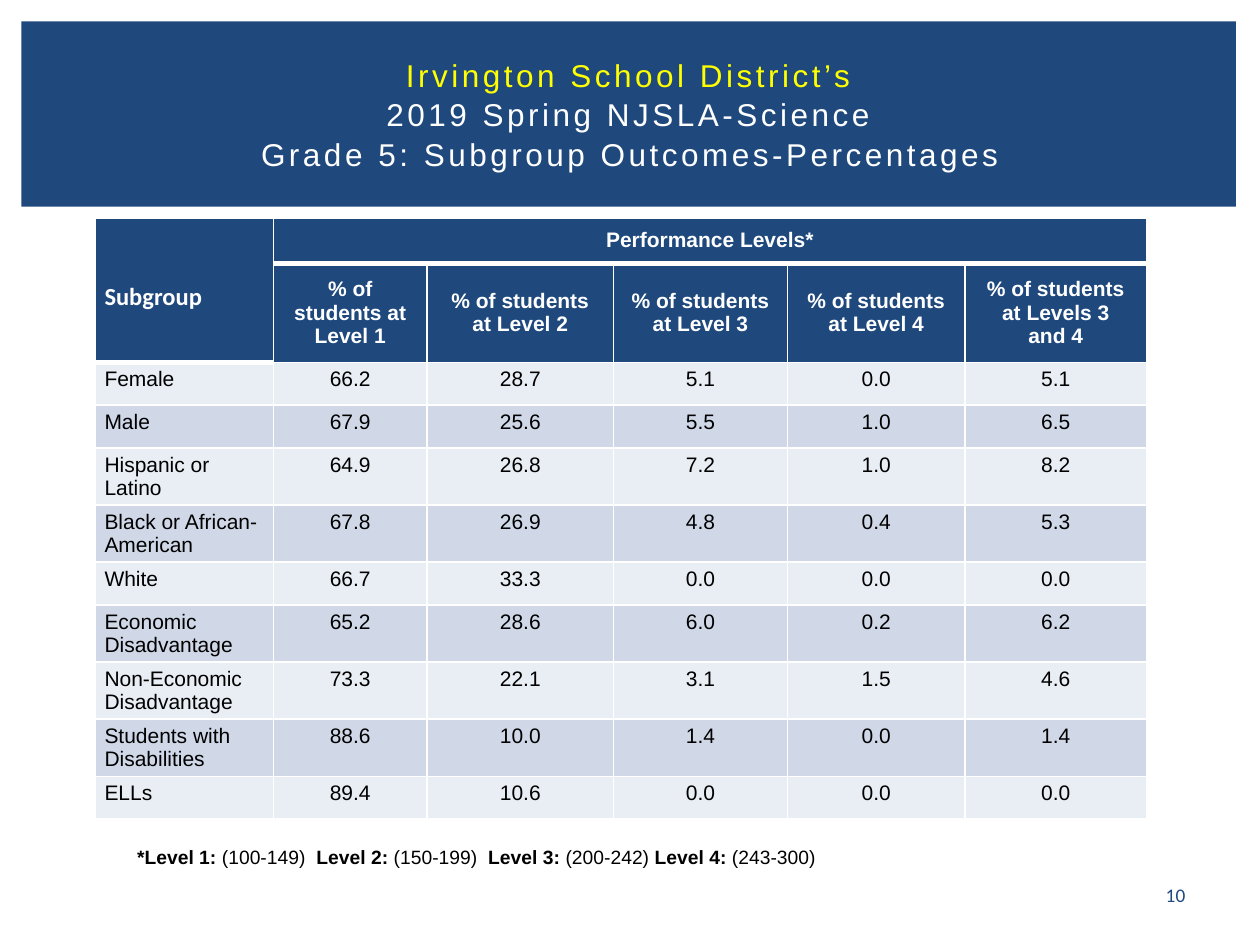
"""Build the Grade 5 science subgroup outcomes slide."""
from dataclasses import dataclass

import lxml.etree
import pptx
import pptx.dml.color
import pptx.enum.shapes
import pptx.enum.text
import pptx.oxml.ns
import pptx.util
from pptx.util import Inches

NAVY = pptx.dml.color.RGBColor(0x1F, 0x49, 0x7D)
YELLOW = pptx.dml.color.RGBColor(0xFF, 0xFF, 0x00)
WHITE = pptx.dml.color.RGBColor(0xFF, 0xFF, 0xFF)
BLACK = pptx.dml.color.RGBColor(0x00, 0x00, 0x00)
BANDS = (
    pptx.dml.color.RGBColor(0xE9, 0xED, 0xF4),
    pptx.dml.color.RGBColor(0xD0, 0xD8, 0xE8),
)
CENTER = pptx.enum.text.PP_ALIGN.CENTER
LEFT = pptx.enum.text.PP_ALIGN.LEFT
MIDDLE = pptx.enum.text.MSO_ANCHOR.MIDDLE
TOP = pptx.enum.text.MSO_ANCHOR.TOP


@dataclass(frozen=True)
class TextStyle:
    size: float
    color: pptx.dml.color.RGBColor
    font: str = "Arial"
    bold: bool = False


@dataclass(frozen=True)
class CellStyle:
    text: TextStyle
    fill: pptx.dml.color.RGBColor
    align: pptx.enum.text.PP_ALIGN = CENTER
    anchor: pptx.enum.text.MSO_ANCHOR = TOP
    side_margin: float = 0.07
    top_margin: float = 0.04
    bottom_margin: float = 0.04
    top_line: float = 1
    bottom_line: float = 1


@dataclass(frozen=True)
class Subgroup:
    name: str
    percentages: tuple[float, ...]


@dataclass(frozen=True)
class LevelRange:
    label: str
    scores: str


SUBGROUPS = (
    Subgroup("Female", (66.2, 28.7, 5.1, 0.0, 5.1)),
    Subgroup("Male", (67.9, 25.6, 5.5, 1.0, 6.5)),
    Subgroup("Hispanic or Latino", (64.9, 26.8, 7.2, 1.0, 8.2)),
    Subgroup("Black or African-American", (67.8, 26.9, 4.8, 0.4, 5.3)),
    Subgroup("White", (66.7, 33.3, 0.0, 0.0, 0.0)),
    Subgroup("Economic Disadvantage", (65.2, 28.6, 6.0, 0.2, 6.2)),
    Subgroup("Non-Economic Disadvantage", (73.3, 22.1, 3.1, 1.5, 4.6)),
    Subgroup("Students with Disabilities", (88.6, 10.0, 1.4, 0.0, 1.4)),
    Subgroup("ELLs", (89.4, 10.6, 0.0, 0.0, 0.0)),
)
LEVELS = ("Level 1", "Level 2", "Level 3", "Level 4", "Levels 3 and 4")
LEVEL_RANGES = (
    LevelRange("*Level 1:", " (100-149)  "),
    LevelRange("Level 2:", " (150-199)  "),
    LevelRange("Level 3: ", "(200-242) "),
    LevelRange("Level 4:", " (243-300)"),
)
COLUMN_WIDTHS = (1.41, 1.22, 1.48, 1.38, 1.41, 1.44)
HEADER_HEIGHTS = (0.36, 0.78)
BODY_HEIGHT = 0.34


def add_run(paragraph, text: str, style: TextStyle):
    run = paragraph.add_run()
    run.text = text
    run.font.name = style.font
    run.font.size = pptx.util.Pt(style.size)
    run.font.bold = style.bold
    run.font.color.rgb = style.color
    return run


def place(shape, left: float, top: float, width: float, height: float) -> None:
    shape.left, shape.top = Inches(left), Inches(top)
    shape.width, shape.height = Inches(width), Inches(height)


def add_border(cell, side: str, points: float) -> None:
    properties = cell._tc.get_or_add_tcPr()
    line = lxml.etree.SubElement(
        properties, pptx.oxml.ns.qn(f"a:ln{side}"), w=str(pptx.util.Pt(points))
    )
    fill = lxml.etree.SubElement(line, pptx.oxml.ns.qn("a:solidFill"))
    lxml.etree.SubElement(fill, pptx.oxml.ns.qn("a:srgbClr"), val=str(WHITE))


def format_cell(cell, style: CellStyle) -> None:
    for side, points in zip("LRTB", (1, 1, style.top_line, style.bottom_line)):
        add_border(cell, side, points)
    cell.fill.solid()
    cell.fill.fore_color.rgb = style.fill
    cell.vertical_anchor = style.anchor
    cell.margin_left = cell.margin_right = Inches(style.side_margin)
    cell.margin_top = Inches(style.top_margin)
    cell.margin_bottom = Inches(style.bottom_margin)


def fill_cell(cell, text: str, style: CellStyle) -> None:
    format_cell(cell, style)
    paragraph = cell.text_frame.paragraphs[0]
    paragraph.alignment = style.align
    add_run(paragraph, text, style.text)


def add_heading(slide) -> None:
    banner = slide.shapes.add_shape(
        pptx.enum.shapes.MSO_SHAPE.RECTANGLE,
        Inches(0.17), Inches(0.17), Inches(9.64), Inches(1.47),
    )
    banner.shadow.inherit = False
    banner.fill.solid()
    banner.fill.fore_color.rgb = NAVY
    banner.line.fill.background()

    title = slide.shapes.title
    title.element.addprevious(banner.element)
    place(title, 1.46, 0.39, 7.08, 1.02)
    title.text_frame.vertical_anchor = MIDDLE
    title.text_frame.word_wrap = True
    heading = title.text_frame.paragraphs[0]
    heading.alignment = CENTER
    heading.line_spacing = 1.05
    lines = (
        ("Irvington School District’s", YELLOW),
        ("2019 Spring NJSLA-Science", WHITE),
        ("Grade 5: Subgroup Outcomes-Percentages", WHITE),
    )
    for index, (text, color) in enumerate(lines):
        if index:
            heading.add_line_break()
        run = add_run(heading, text, TextStyle(18, color))
        run.font._element.set("spc", "200")


def add_outcomes(slide) -> None:
    heights = HEADER_HEIGHTS + (BODY_HEIGHT,) * len(SUBGROUPS)
    outcomes = slide.shapes.add_table(
        len(heights), len(COLUMN_WIDTHS), Inches(0.76), Inches(1.73),
        Inches(sum(COLUMN_WIDTHS)), Inches(sum(heights)),
    ).table
    outcomes.first_row = outcomes.horz_banding = False
    for column, width in zip(outcomes.columns, COLUMN_WIDTHS):
        column.width = Inches(width)
    for row, height in zip(outcomes.rows, heights):
        row.height = Inches(height)

    outcomes.cell(0, 0).merge(outcomes.cell(1, 0))
    outcomes.cell(0, 1).merge(outcomes.cell(0, len(LEVELS)))
    corner = CellStyle(
        TextStyle(14, WHITE, "Calibri", True), NAVY, LEFT, top_margin=0.51, bottom_line=3
    )
    header = TextStyle(12, WHITE, bold=True)
    group = CellStyle(header, NAVY, CENTER, MIDDLE, 0.14, 0.05, 0.05, bottom_line=3)
    level_style = CellStyle(header, NAVY, CENTER, MIDDLE, 0.14, 0.05, 0.05, top_line=3)
    fill_cell(outcomes.cell(0, 0), "Subgroup", corner)
    fill_cell(outcomes.cell(0, 1), "Performance Levels*", group)
    format_cell(outcomes.cell(1, 0), CellStyle(header, NAVY))
    for column in range(2, len(COLUMN_WIDTHS)):
        format_cell(outcomes.cell(0, column), group)
    for column, level in enumerate(LEVELS, 1):
        fill_cell(outcomes.cell(1, column), f"% of students at {level}", level_style)

    body = TextStyle(12, BLACK)
    for index, subgroup in enumerate(SUBGROUPS):
        band = BANDS[index % 2]
        row = index + len(HEADER_HEIGHTS)
        fill_cell(outcomes.cell(row, 0), subgroup.name, CellStyle(body, band, LEFT))
        for column, percentage in enumerate(subgroup.percentages, 1):
            fill_cell(outcomes.cell(row, column), f"{percentage:.1f}", CellStyle(body, band))


def add_footer(slide) -> None:
    page = slide.shapes.add_textbox(Inches(9.01), Inches(6.95), Inches(0.64), Inches(0.3))
    page.text_frame.word_wrap = True
    page.text_frame.vertical_anchor = MIDDLE
    page.text_frame.paragraphs[0].alignment = CENTER
    add_run(page.text_frame.paragraphs[0], "10", TextStyle(11, NAVY, "Calibri"))

    legend = slide.shapes.add_textbox(Inches(0.99), Inches(6.66), Inches(6.24), Inches(0.29))
    legend.text_frame.word_wrap = True
    legend.text_frame.auto_size = pptx.enum.text.MSO_AUTO_SIZE.SHAPE_TO_FIT_TEXT
    for level in LEVEL_RANGES:
        add_run(legend.text_frame.paragraphs[0], level.label, TextStyle(11, BLACK, bold=True))
        add_run(legend.text_frame.paragraphs[0], level.scores, TextStyle(11, BLACK))


def main() -> None:
    deck = pptx.Presentation()
    deck.slide_width, deck.slide_height = Inches(10), Inches(7.5)
    slide = deck.slides.add_slide(deck.slide_layouts[5])
    add_heading(slide)
    add_outcomes(slide)
    add_footer(slide)
    deck.save("out.pptx")


if __name__ == "__main__":
    main()
